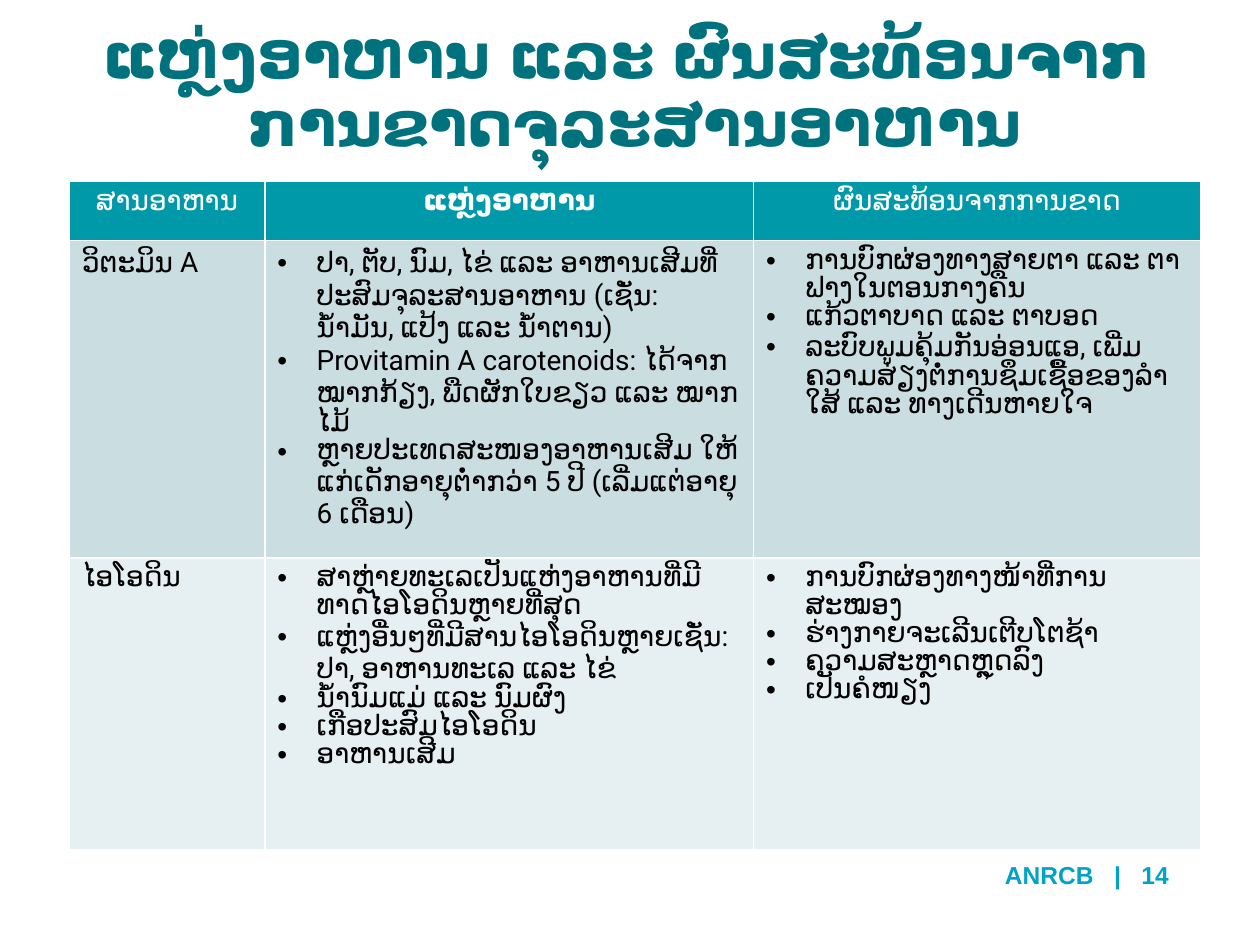
from lxml.etree import SubElement
from pptx import Presentation
from pptx.dml.color import RGBColor
from pptx.enum.text import MSO_ANCHOR, PP_ALIGN
from pptx.oxml.ns import qn
from pptx.util import Cm, Pt

COLORS = {
    "title": "00727E", "head": "0099A9", "dark": "CADDE1", "light": "E6EFF1",
    "foot": "00A2C7", "white": "FFFFFF", "black": "000000",
}
HEADS = ["ສານອາຫານ", "ແຫຼ່ງອາຫານ", "ຜົນສະທ້ອນຈາກການຂາດ"]
ROWS = [
    ("ວິຕະມິນ A",
     ["ປາ, ຕັບ, ນົມ, ໄຂ່ ແລະ ອາຫານເສີມທີ່ປະສົມຈຸລະສານອາຫານ (ເຊັ່ນ: ນໍ້າມັນ, ແປ້ງ ແລະ ນໍ້າຕານ)",
      "Provitamin A carotenoids: ໄດ້ຈາກ ໝາກກ້ຽງ, ພືດຜັກໃບຂຽວ ແລະ ໝາກໄມ້",
      "ຫຼາຍປະເທດສະໜອງອາຫານເສີມ ໃຫ້ແກ່ເດັກອາຍຸຕ່ຳກວ່າ 5 ປີ (ເລີ່ມແຕ່ອາຍຸ 6 ເດືອນ)"],
     ["ການບົກຜ່ອງທາງສາຍຕາ ແລະ ຕາຟາງໃນຕອນກາງຄືນ",
      "ແກ້ວຕາບາດ ແລະ ຕາບອດ",
      "ລະບົບພູມຄຸ້ມກັນອ່ອນແອ, ເພີ່ມຄວາມສ່ຽງຕໍ່ການຊຶມເຊື້ອຂອງລຳໃສ້ ແລະ ທາງເດີນຫາຍໃຈ"]),
    ("ໄອໂອດິນ",
     ["ສາຫຼ່າຍທະເລເປັນແຫ່ງອາຫານທີ່ມີທາດໄອໂອດິນຫຼາຍທີ່ສຸດ",
      "ແຫຼ່ງອື່ນໆທີ່ມີສານໄອໂອດິນຫຼາຍເຊັ່ນ: ປາ, ອາຫານທະເລ ແລະ ໄຂ່",
      "ນໍ້ານົມແມ່ ແລະ ນົມຜົງ",
      "ເກືອປະສົມໄອໂອດິນ",
      "ອາຫານເສີມ"],
     ["ການບົກຜ່ອງທາງໜ້າທີ່ການສະໝອງ",
      "ຮ່າງກາຍຈະເລີນເຕີບໂຕຊ້າ",
      "ຄວາມສະຫຼາດຫຼຸດລົງ",
      "ເປັນຄໍໜຽງ"]),
]


def write(para, text, size=16, font="Roboto", color="black", bold=None,
          align=None, space=None, bullet=False, tabs=()):
    """Fill one paragraph; a newline in the text becomes a line break."""
    props = para._p.get_or_add_pPr()
    if bullet:
        props.set("marL", str(Cm(0.79)))
        props.set("indent", str(-Cm(0.79)))
        tint = SubElement(props, qn("a:buClr"))
        SubElement(tint, qn("a:srgbClr"), val=COLORS["black"])
        SubElement(props, qn("a:buFont"), typeface="Arial")
        SubElement(props, qn("a:buChar"), char="•")
    if tabs:
        stops = SubElement(props, qn("a:tabLst"))
        for stop in tabs:
            SubElement(stops, qn("a:tab"), pos=str(Cm(stop)), algn="l")
    para.alignment = align
    if space:
        para.line_spacing = space
    for num, line in enumerate(text.split("\n")):
        if num:
            para.add_line_break()
        run = para.add_run()
        run.text = line
        run.font.size = Pt(size)
        run.font.name = font
        run.font.bold = bold
        run.font.color.rgb = RGBColor.from_string(COLORS[color])


class Deck:
    def __init__(self):
        self.prs = Presentation()
        self.prs.slide_width, self.prs.slide_height = Cm(25.4), Cm(19.05)
        self.slide = self.prs.slides.add_slide(self.prs.slide_layouts[5])

    def title(self, text, left, top, width, height):
        box = self.slide.shapes.title
        box.left, box.top = Cm(left), Cm(top)
        box.width, box.height = Cm(width), Cm(height)
        box.text_frame.vertical_anchor = MSO_ANCHOR.BOTTOM
        write(box.text_frame.paragraphs[0], text, size=36, color="title",
              bold=True, align=PP_ALIGN.CENTER, space=0.9)

    def cell(self, cell, items, fill, **form):
        cell.fill.solid()
        cell.fill.fore_color.rgb = RGBColor.from_string(COLORS[fill])
        frame = cell.text_frame
        for num, item in enumerate(items):
            para = frame.add_paragraph() if num else frame.paragraphs[0]
            write(para, item, **form)

    def table(self, left, top, widths, heights):
        grid = self.slide.shapes.add_table(
            len(heights), len(widths), Cm(left), Cm(top),
            Cm(sum(widths)), Cm(sum(heights))).table
        for col, width in zip(grid.columns, widths):
            col.width = Cm(width)
        for row, height in zip(grid.rows, heights):
            row.height = Cm(height)
        # Header row: bold comes from the table style, the middle one is explicit
        for col, head in enumerate(HEADS):
            self.cell(grid.cell(0, col), [head], "head", color="white",
                      bold=True if col == 1 else None, align=PP_ALIGN.CENTER)
        # Body rows
        for row, (name, *lists) in enumerate(ROWS, 1):
            fill = "dark" if row % 2 else "light"
            self.cell(grid.cell(row, 0), [name], fill)
            for col, items in enumerate(lists, 1):
                self.cell(grid.cell(row, col), items, fill, bullet=True)

    def footer(self, text, left, top, width, height):
        box = self.slide.shapes.add_textbox(
            Cm(left), Cm(top), Cm(width), Cm(height))
        frame = box.text_frame
        frame.word_wrap = True
        frame.vertical_anchor = MSO_ANCHOR.MIDDLE
        frame.margin_left = Cm(0.63)
        write(frame.paragraphs[0], text, size=14, font="Arial", color="foot",
              bold=True, tabs=(2.2, 2.75))


def main():
    deck = Deck()
    deck.title("ແຫຼ່ງອາຫານ ແລະ ຜົນສະທ້ອນຈາກ \nການຂາດຈຸລະສານອາຫານ",
               0.64, 0.53, 24.33, 2.82)
    deck.table(1.4, 3.66, widths=(3.94, 9.85, 9.02), heights=(1.19, 6.4, 5.87))
    deck.footer("ANRCB\t|\t14", 19.63, 17.12, 4.19, 1.04)
    deck.prs.save("out.pptx")


if __name__ == "__main__":
    main()
